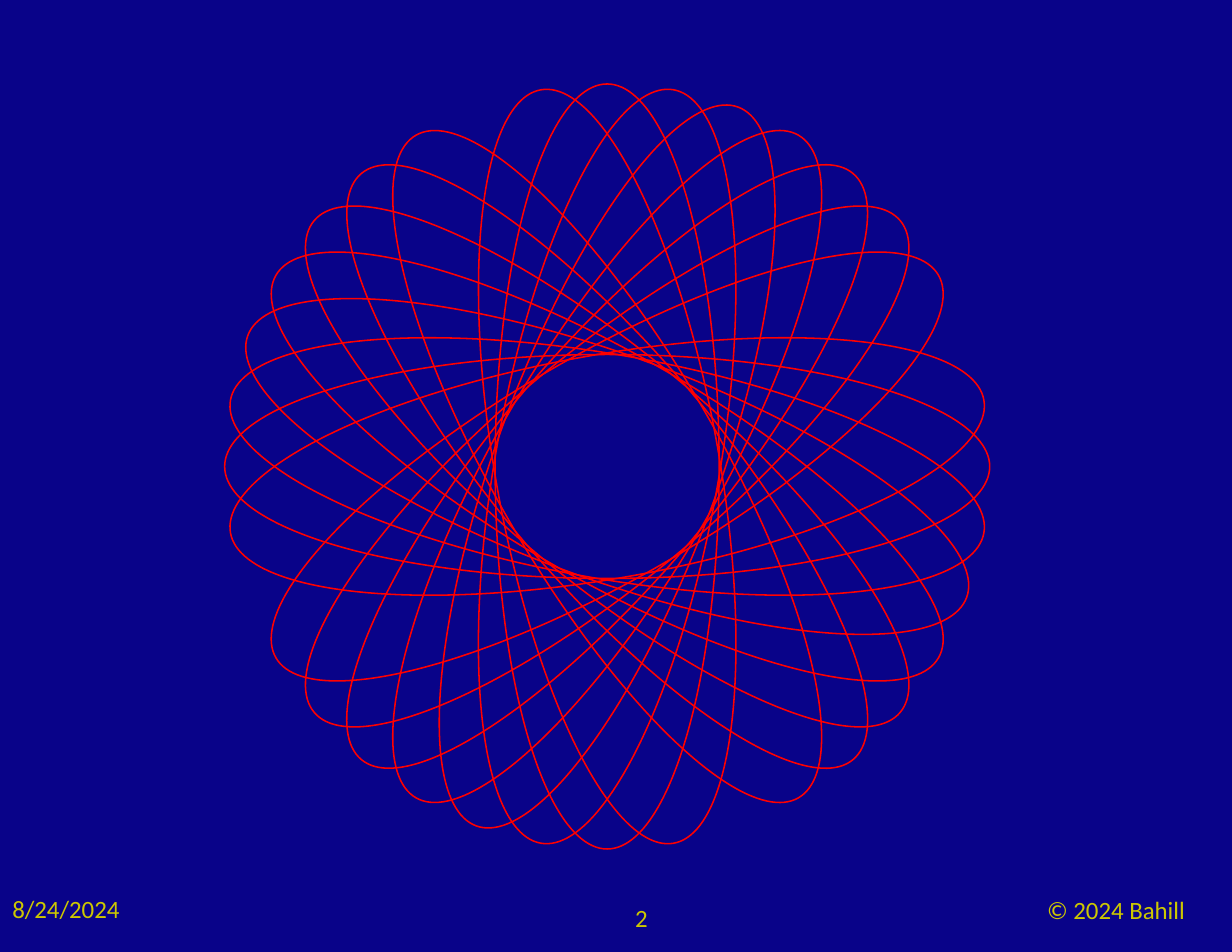
"""Build a slide with a rosette of rotated ellipses and a footer."""
import pptx
import pptx.dml.color
import pptx.enum.shapes
import pptx.enum.text
import pptx.util

Cm = pptx.util.Cm
Pt = pptx.util.Pt
ALIGN = pptx.enum.text.PP_ALIGN

NAVY, RED, YELLOW = "090389", "FF0000", "CDC800"
CENTRE_X, CENTRE_Y = 13.77, 10.58
PETAL_WIDTH, PETAL_HEIGHT = 5.08, 17.35
PETAL_ANGLES = [
    (10, 20, 30, 40, 50, 0, 60, 80),
    (100, 110, 120, 130, 140, 90, 150, 170),
]
FOOTERS = [
    ("8/24/2024", ALIGN.LEFT, (0, 20.12, 5.51, 1.47)),
    ("2", ALIGN.RIGHT, (13.34, 20.32, 1.63, 1.27)),
    ("© 2024 Bahill", ALIGN.CENTER, (22.68, 20.14, 5.26, 1.45)),
]


def paint(color_format, hex_color):
    color_format.rgb = pptx.dml.color.RGBColor.from_string(hex_color)


def add_petal(rosette, angle):
    petal = rosette.shapes.add_shape(
        pptx.enum.shapes.MSO_SHAPE.OVAL,
        Cm(CENTRE_X - PETAL_WIDTH / 2), Cm(CENTRE_Y - PETAL_HEIGHT / 2),
        Cm(PETAL_WIDTH), Cm(PETAL_HEIGHT))
    petal.rotation = angle
    petal.shadow.inherit = False
    petal.fill.background()
    paint(petal.line.color, RED)
    petal.line.width = Pt(1)


def add_footer(slide, wording, alignment, place):
    footer = slide.shapes.add_textbox(*map(Cm, place))
    frame = footer.text_frame
    frame.word_wrap = True
    frame.margin_left = frame.margin_right = Cm(0.28)
    frame.margin_top = frame.margin_bottom = Cm(0.15)
    frame.text = wording
    paragraph = frame.paragraphs[0]
    paragraph.alignment = alignment
    font = paragraph.runs[0].font
    font.name = "Calibri"
    font.size = Pt(16)
    paint(font.color, YELLOW)


def main():
    deck = pptx.Presentation()
    deck.slide_width, deck.slide_height = Cm(27.94), Cm(21.59)
    slide = deck.slides.add_slide(deck.slide_layouts[6])
    background = slide.background.fill
    background.solid()
    paint(background.fore_color, NAVY)

    for angles in PETAL_ANGLES:
        rosette = slide.shapes.add_group_shape()
        for angle in angles:
            add_petal(rosette, angle)

    for wording, alignment, place in FOOTERS:
        add_footer(slide, wording, alignment, place)

    deck.save("out.pptx")


if __name__ == "__main__":
    main()
